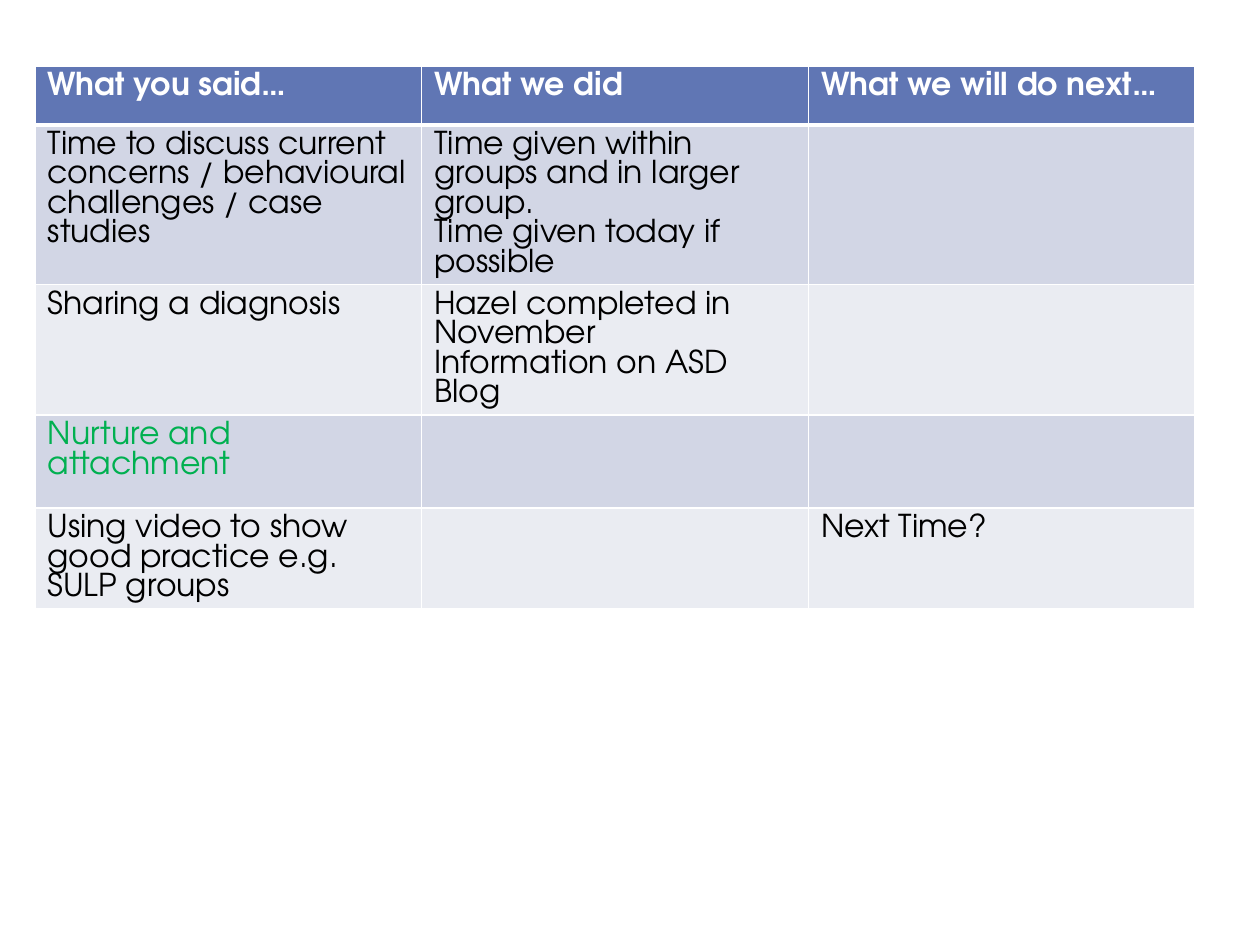
import dataclasses

import lxml.etree
import pptx
import pptx.dml.color
import pptx.oxml.ns
import pptx.table
import pptx.util

Pt = pptx.util.Pt
RGBColor = pptx.dml.color.RGBColor
qn = pptx.oxml.ns.qn

WHITE = RGBColor(0xFF, 0xFF, 0xFF)
BLACK = RGBColor(0x00, 0x00, 0x00)
GREEN = RGBColor(0x00, 0xB0, 0x50)
HEADER_BLUE = RGBColor(0x60, 0x76, 0xB4)
BAND_DARK = RGBColor(0xD2, 0xD6, 0xE5)
BAND_LIGHT = RGBColor(0xEA, 0xEC, 0xF2)

FONT = "TeX Gyre Adventor"
COLUMN_WIDTH = 221
HEADER_HEIGHT = 33.84
ROW_HEIGHT = 53.28


@dataclasses.dataclass(frozen=True)
class Row:
    texts: tuple[str, str, str]
    fill: RGBColor
    color: RGBColor = BLACK
    bold: bool = False
    height: float = ROW_HEIGHT
    top: float = 1
    bottom: float = 1


ROWS = (
    Row(("What you said…", "What we did", "What we will do next…"),
        HEADER_BLUE, WHITE, bold=True, height=HEADER_HEIGHT, bottom=3),
    Row(("Time to discuss current concerns / behavioural challenges / case studies",
         "Time given within groups and in larger group.\nTime given today if possible",
         ""), BAND_DARK, top=3),
    Row(("Sharing a diagnosis",
         "Hazel completed in November\nInformation on ASD Blog", ""), BAND_LIGHT),
    Row(("Nurture and attachment", "", ""), BAND_DARK, GREEN),
    Row(("Using video to show good practice e.g. SULP groups", "", "Next Time?"),
        BAND_LIGHT),
)


def set_borders(cell: pptx.table._Cell, top: float, bottom: float) -> None:
    """Draw white cell borders; the sides are always 1 pt."""
    tc_pr = cell._tc.get_or_add_tcPr()
    for side, width in (("L", 1), ("R", 1), ("T", top), ("B", bottom)):
        ln = lxml.etree.SubElement(tc_pr, qn(f"a:ln{side}"), w=str(Pt(width)))
        fill = lxml.etree.SubElement(ln, qn("a:solidFill"))
        lxml.etree.SubElement(fill, qn("a:srgbClr"), val=str(WHITE))


def fill_cell(cell: pptx.table._Cell, text: str, row: Row) -> None:
    set_borders(cell, row.top, row.bottom)
    cell.fill.solid()
    cell.fill.fore_color.rgb = row.fill
    cell.text = text
    for p in cell.text_frame.paragraphs:
        p.font.name = FONT
        p.font.size = Pt(18)
        p.font.bold = row.bold
        p.font.color.rgb = row.color


def main() -> None:
    prs = pptx.Presentation()
    prs.slide_width, prs.slide_height = Pt(720), Pt(540)
    s = prs.slides.add_slide(prs.slide_layouts[6])
    columns = len(ROWS[0].texts)
    table = s.shapes.add_table(
        len(ROWS), columns, Pt(20), Pt(37.6),
        Pt(columns * COLUMN_WIDTH), Pt(sum(row.height for row in ROWS)),
    ).table
    for column in table.columns:
        column.width = Pt(COLUMN_WIDTH)
    for i, row in enumerate(ROWS):
        table.rows[i].height = Pt(row.height)
        for j, text in enumerate(row.texts):
            fill_cell(table.cell(i, j), text, row)
    prs.save("out.pptx")


if __name__ == "__main__":
    main()
